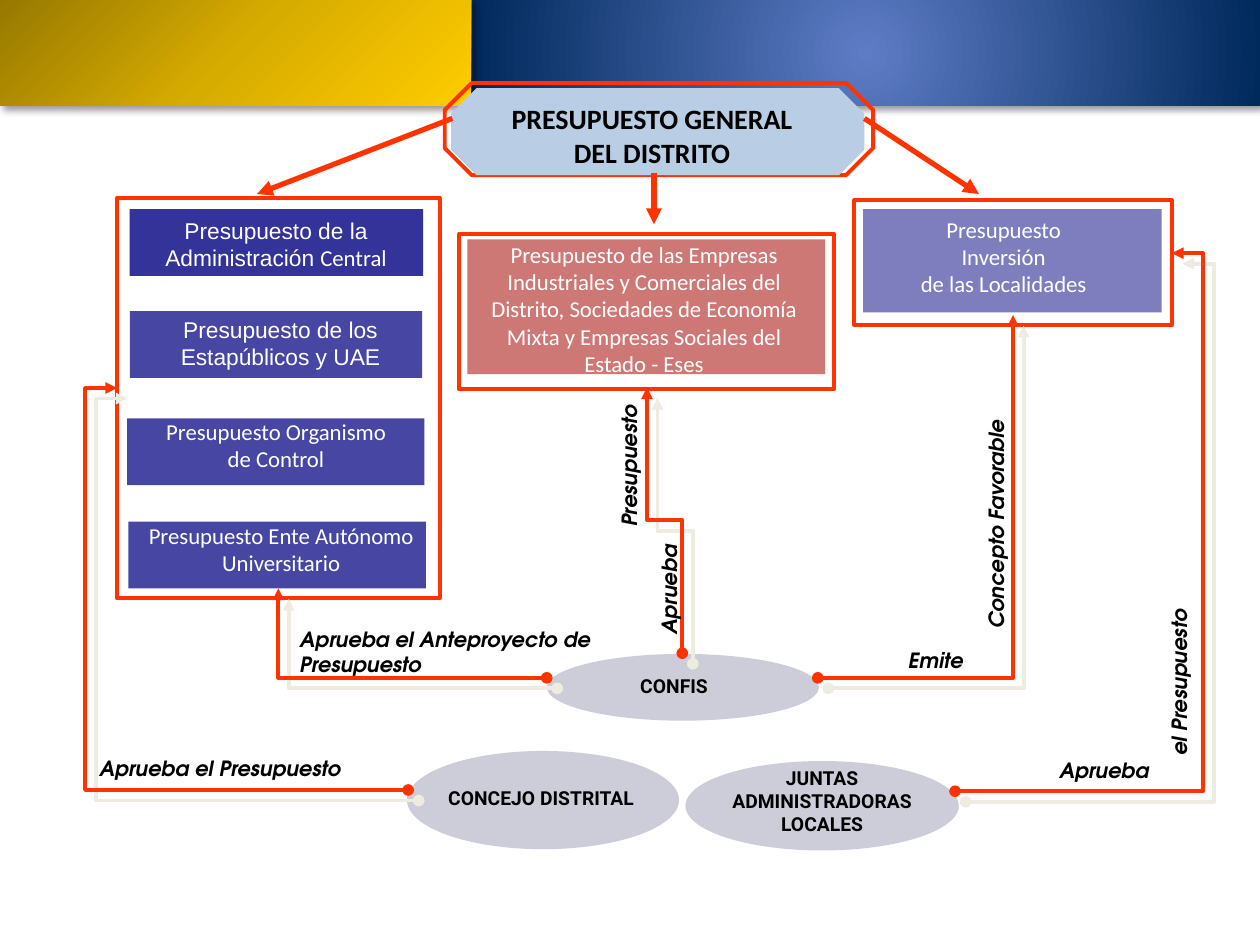
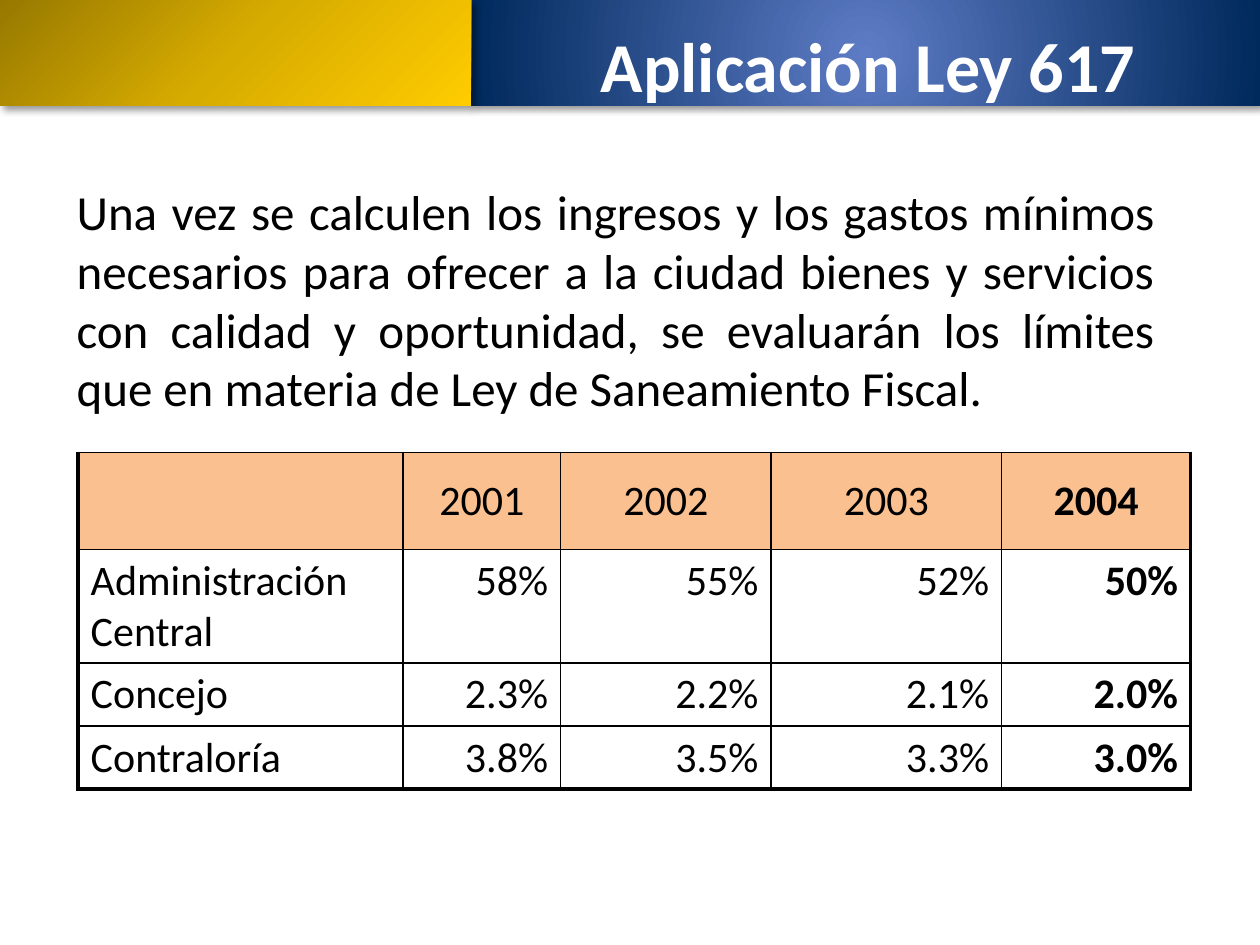
from dataclasses import dataclass

from lxml.etree import SubElement
from pptx import Presentation
from pptx.dml.color import RGBColor
from pptx.enum.shapes import MSO_CONNECTOR, MSO_SHAPE
from pptx.enum.text import MSO_ANCHOR, MSO_AUTO_SIZE, PP_ALIGN
from pptx.oxml.ns import qn
from pptx.util import Inches, Pt


@dataclass(frozen=True)
class Theme:
    # Colours
    black: str = "000000"
    white: str = "FFFFFF"
    red: str = "FF3300"
    navy: str = "333399"
    brick: str = "C0504D"
    sky: str = "B9CDE5"
    mist: str = "CDCDDA"
    cream: str = "EEECE1"
    peach: str = "FAC090"
    blues: tuple = ((0, "5E7CC5"), (100, "00295C"))
    golds: tuple = ((0, "977900"), (50, "D7AC00"), (100, "FFCC00"))
    # Fonts and type sizes
    font: str = "Calibri"
    sans: str = "Arial"
    organ: str = "Roboto"
    action: str = "TeX Gyre Adventor"
    title: int = 40
    body: int = 28
    grid: int = 24
    head: int = 16
    box: int = 13
    label: int = 12
    small: int = 11
    # Line widths
    thin: float = 1
    thick: float = 2.25
    arrow: float = 3


LEFT, MID, RIGHT, JUST = (PP_ALIGN.LEFT, PP_ALIGN.CENTER, PP_ALIGN.RIGHT,
                          PP_ALIGN.JUSTIFY)


def add(parent, tag, **attrs):
    """Append a child element with the given attributes."""
    return SubElement(parent, qn(tag), {k: str(v) for k, v in attrs.items()})


def tint(parent, color, alpha=100):
    node = add(parent, "a:srgbClr", val=color)
    if alpha < 100:
        add(node, "a:alpha", val=alpha * 1000)


class Deck:
    def __init__(self, theme):
        self.theme = theme
        self.show = Presentation()
        self.show.slide_width, self.show.slide_height = Inches(10), Inches(7.5)
        self.slide = None

    def start(self):
        """Open a blank slide with the two header bands."""
        self.slide = self.show.slides.add_slide(self.show.slide_layouts[6])
        self.band((3.74, 0, 6.26, 0.84), self.theme.blues, (50, 50, 50, 50))
        self.band((0, 0, 3.74, 0.84), self.theme.golds, (0, 0, 100, 100))

    def shape(self, at, fill=None, line=None, kind=MSO_SHAPE.RECTANGLE,
              alpha=100):
        item = self.slide.shapes.add_shape(kind, *map(Inches, at))
        item.shadow.inherit = False
        if fill:
            item.fill.solid()
            item.fill.fore_color.rgb = RGBColor.from_string(fill)
            if alpha < 100:
                color = item.element.spPr.find(".//" + qn("a:srgbClr"))
                add(color, "a:alpha", val=alpha * 1000)
        else:
            item.fill.background()
        if line:
            item.line.color.rgb = RGBColor.from_string(line)
            item.line.width = Pt(self.theme.thick)
        else:
            item.line.fill.background()
        return item

    def shade(self, props, color, alpha, blur, dist):
        """Give shape properties an outer shadow to the lower right."""
        effects = props.find(qn("a:effectLst"))
        if effects is None:
            effects = add(props, "a:effectLst")
        outer = add(effects, "a:outerShdw", blurRad=Pt(blur), dist=Pt(dist),
                    dir=45 * 60000, algn="ctr", rotWithShape=0)
        tint(outer, color, alpha)

    def band(self, at, stops, focus):
        props = self.shape(at).element.spPr
        grad = add(props, "a:gradFill", rotWithShape=1)
        props.replace(props.find(qn("a:noFill")), grad)
        colors = add(grad, "a:gsLst")
        for pos, color in stops:
            tint(add(colors, "a:gs", pos=pos * 1000), color)
        circle = add(grad, "a:path", path="circle")
        sides = {k: v * 1000 for k, v in zip("ltrb", focus)}
        add(circle, "a:fillToRect", **sides)
        self.shade(props, self.theme.black, 40, 4, 3)

    def style(self, para, size, font, color, bold=False, slant=False):
        for run in para.runs:
            face = run.font
            face.size, face.name, face.bold, face.italic = (
                Pt(size), font, bold, slant)
            face.color.rgb = RGBColor.from_string(color)

    def text(self, at, lines, size, font=None, color=None, align=MID,
             bold=False, slant=False, turn=0, pitch=None, gap=0,
             wrap=True, anchor=MSO_ANCHOR.TOP):
        item = self.slide.shapes.add_textbox(*map(Inches, at))
        item.rotation = turn
        frame = item.text_frame
        frame.text = lines
        frame.word_wrap = wrap
        frame.auto_size = MSO_AUTO_SIZE.SHAPE_TO_FIT_TEXT
        frame.vertical_anchor = anchor
        for i, para in enumerate(frame.paragraphs):
            para.alignment = align
            if pitch:
                para.line_spacing = pitch
            if gap and i:
                para.space_before = Pt(gap)
            self.style(para, size, font or self.theme.font,
                       color or self.theme.black, bold, slant)
        return item

    def label(self, at, lines, turn=0, pitch=0.5, gap=0):
        """Slanted words beside a connector."""
        self.text(at, lines, self.theme.label, self.theme.action, align=LEFT,
                  bold=True, slant=True, turn=turn, pitch=pitch, gap=gap)

    def link(self, start, end, kind, width, head=None, tail="triangle"):
        item = self.slide.shapes.add_connector(
            kind, *map(Inches, start + end))
        item.line.color.rgb = RGBColor.from_string(self.theme.red)
        item.line.width = Pt(width)
        props = item.element.spPr
        line = props.find(qn("a:ln"))
        if head:
            add(line, "a:headEnd", type=head)
        add(line, "a:tailEnd", type=tail)
        add(props, "a:effectLst")
        return props

    def arrow(self, start, end):
        self.link(start, end, MSO_CONNECTOR.STRAIGHT, self.theme.arrow)

    def elbow(self, start, end, bend=None, head="oval", tail="triangle",
              turn=0):
        """Bent arrow: one corner without bend, two corners with it."""
        props = self.link(start, end, MSO_CONNECTOR.ELBOW, self.theme.thick,
                          head, tail)
        geom = props.find(qn("a:prstGeom"))
        if bend is None:
            geom.set("prst", "bentConnector2")
        else:
            guides = geom.find(qn("a:avLst"))
            if guides is None:
                guides = add(geom, "a:avLst")
            add(guides, "a:gd", name="adj1", fmla=f"val {round(bend * 100000)}")
        if turn:
            props.find(qn("a:xfrm")).set("rot", str(turn * 60000))
        self.shade(props, self.theme.cream, 100, 0, 8.5)

    def table(self, at, cols, heights, rows):
        table = self.slide.shapes.add_table(
            len(rows), len(cols), *map(Inches, at)).table
        table.first_row = table.horz_banding = False
        for col, width in zip(table.columns, cols):
            col.width = Inches(width)
        for row, height in zip(table.rows, heights):
            row.height = Inches(height)
        for r, row in enumerate(rows):
            for c, word in enumerate(row):
                last = c == len(cols) - 1
                edges = {"L": c == 0, "R": last, "T": False,
                         "B": r == len(rows) - 1}
                self.cell(table.cell(r, c), word, edges, r == 0, c == 0, last)

    def cell(self, cell, word, edges, top, first, bold):
        props = cell._tc.get_or_add_tcPr()
        for side, outer in edges.items():
            width = self.theme.thick if outer else self.theme.thin
            line = add(props, f"a:ln{side}", w=Pt(width))
            tint(add(line, "a:solidFill"), self.theme.black)
        if top:
            cell.fill.solid()
            cell.fill.fore_color.rgb = RGBColor.from_string(self.theme.peach)
            cell.vertical_anchor = MSO_ANCHOR.MIDDLE
        else:
            cell.fill.background()
        cell.text_frame.text = word
        para = cell.text_frame.paragraphs[0]
        para.alignment = MID if top else LEFT if first else RIGHT
        self.style(para, self.theme.grid, self.theme.font, self.theme.black,
                   bold)


def budget(deck):
    """Parts of the district budget and who approves them."""
    t = deck.theme
    deck.start()

    # Frames and heading
    deck.shape((3.53, 0.66, 3.4, 0.73), line=t.red, kind=MSO_SHAPE.OCTAGON)
    for frame in ((6.78, 1.59, 2.52, 0.99), (0.93, 1.57, 2.56, 3.18),
                  (3.64, 1.86, 2.98, 1.23)):
        deck.shape(frame, line=t.red)
    deck.shape((3.58, 0.7, 3.28, 0.69), t.sky, kind=MSO_SHAPE.OCTAGON)
    deck.text((3.62, 0.76, 3.11, 0.64), "PRESUPUESTO GENERAL\nDEL DISTRITO",
              t.head, bold=True)

    # Budget boxes: fill area, colour, opacity, text area, font, anchor, words
    mid, top = MSO_ANCHOR.MIDDLE, MSO_ANCHOR.TOP
    boxes = (
        ((1.03, 1.66, 2.33, 0.53), t.navy, 100, (1.02, 1.66, 2.34, 0.55),
         t.sans, mid, "Presupuesto de la\nAdministración "),
        ((3.71, 1.9, 2.84, 1.07), t.brick, 77, (3.67, 1.86, 2.88, 1.19),
         t.font, top, "Presupuesto de las Empresas\nIndustriales y Comerciales "
         "del Distrito, Sociedades de Economía Mixta y Empresas Sociales del "
         "Estado - Eses"),
        ((6.85, 1.66, 2.37, 0.82), t.navy, 63, (6.95, 1.66, 2.03, 0.75),
         t.font, top, "Presupuesto\nInversión\nde las Localidades"),
        ((1.03, 2.47, 2.32, 0.53), t.navy, 90, (1.09, 2.45, 2.27, 0.54),
         t.sans, mid, "Presupuesto de los\nEstapúblicos y UAE"),
        ((1.01, 3.32, 2.36, 0.53), t.navy, 90, (0.94, 3.26, 2.5, 0.54),
         t.font, mid, "Presupuesto Organismo\nde Control"),
        ((1.02, 4.14, 2.36, 0.53), t.navy, 90, (1.02, 4.09, 2.42, 0.53),
         t.font, mid, "Presupuesto Ente Autónomo Universitario"),
    )
    notes = []
    for area, fill, alpha, place, font, anchor, words in boxes:
        deck.shape(area, fill, alpha=alpha)
        notes.append(deck.text(place, words, t.box, font, t.white,
                               anchor=anchor))
    para = notes[0].text_frame.paragraphs[1]
    para.add_run().text = "Central"
    deck.style(para, t.box, t.sans, t.white)
    para.runs[1].font.name = t.font

    # Approving bodies
    for area, place, words, wrap in (
            ((3.23, 5.96, 2.16, 0.78), (3.22, 6.19, 2.15, 0.28),
             "CONCEJO DISTRITAL", True),
            ((5.44, 6.04, 2.17, 0.71), (5.47, 6.03, 2.11, 0.65),
             "JUNTAS\nADMINISTRADORAS\nLOCALES", True),
            ((4.34, 5.19, 2.16, 0.53), (4.96, 5.3, 0.78, 0.28),
             "CONFIS", False)):
        deck.shape(area, t.mist, kind=MSO_SHAPE.OVAL)
        deck.text(place, words, t.small, t.organ, bold=True, wrap=wrap)

    # Arrows from the heading
    deck.arrow((3.59, 0.94), (2.04, 1.54))
    deck.arrow((6.86, 0.94), (7.77, 1.54))
    deck.arrow((5.19, 1.37), (5.19, 1.78))

    # Approval paths
    deck.elbow((6.49, 5.38), (8.04, 2.5))
    deck.elbow((4.22, 4.27), (6.33, 3.99), bend=0.5, turn=270)
    deck.elbow((3.24, 6.27), (0.93, 3.08), bend=1.11)
    deck.elbow((9.3, 2.01), (7.58, 6.28), bend=-0.145, head="triangle",
               tail="oval")
    deck.elbow((4.34, 5.38), (2.21, 4.67))

    # Path labels
    for place, words in (((6.81, 3.84, 2.22, 0.28), "Concepto Favorable"),
                         ((4.86, 4.53, 0.93, 0.28), "Aprueba"),
                         ((4.35, 3.48, 1.32, 0.28), "Presupuesto"),
                         ((8.18, 4.76, 2.39, 0.28), "el Presupuesto")):
        deck.label(place, words, turn=270, pitch=0.9)
    for place, words in (((7.11, 5.18, 0.93, 0.21), "Emite"),
                         ((0.69, 6.03, 2.68, 0.22), "Aprueba el Presupuesto"),
                         ((8.31, 6.05, 1.23, 0.22), "Aprueba")):
        deck.label(place, words)
    deck.label((2.28, 5.01, 3.42, 0.4),
               "Aprueba el Anteproyecto de\nPresupuesto", gap=7)


def limits(deck):
    """Spending limits by year."""
    t = deck.theme
    deck.start()
    deck.text((0.51, 1.39, 8.75, 1.99),
              "Una vez se calculen los ingresos y los gastos mínimos necesarios "
              "para ofrecer a la ciudad bienes y servicios con calidad y "
              "oportunidad, se evaluarán los límites que en materia de Ley de "
              "Saneamiento Fiscal.", t.body, align=JUST)
    deck.text((3.9, 0.13, 5.98, 0.77), "Aplicación Ley 617", t.title,
              color=t.white, bold=True)
    deck.table((0.62, 3.59, 8.83, 2.67), (2.58, 1.25, 1.67, 1.83, 1.5),
               (0.77, 0.9, 0.5, 0.5),
               (("", "2001", "2002", "2003", "2004"),
                ("Administración Central", "58%", "55%", "52%", "50%"),
                ("Concejo", "2.3%", "2.2%", "2.1%", "2.0%"),
                ("Contraloría", "3.8%", "3.5%", "3.3%", "3.0%")))


def main():
    deck = Deck(Theme())
    budget(deck)
    limits(deck)
    deck.show.save("out.pptx")


if __name__ == "__main__":
    main()
